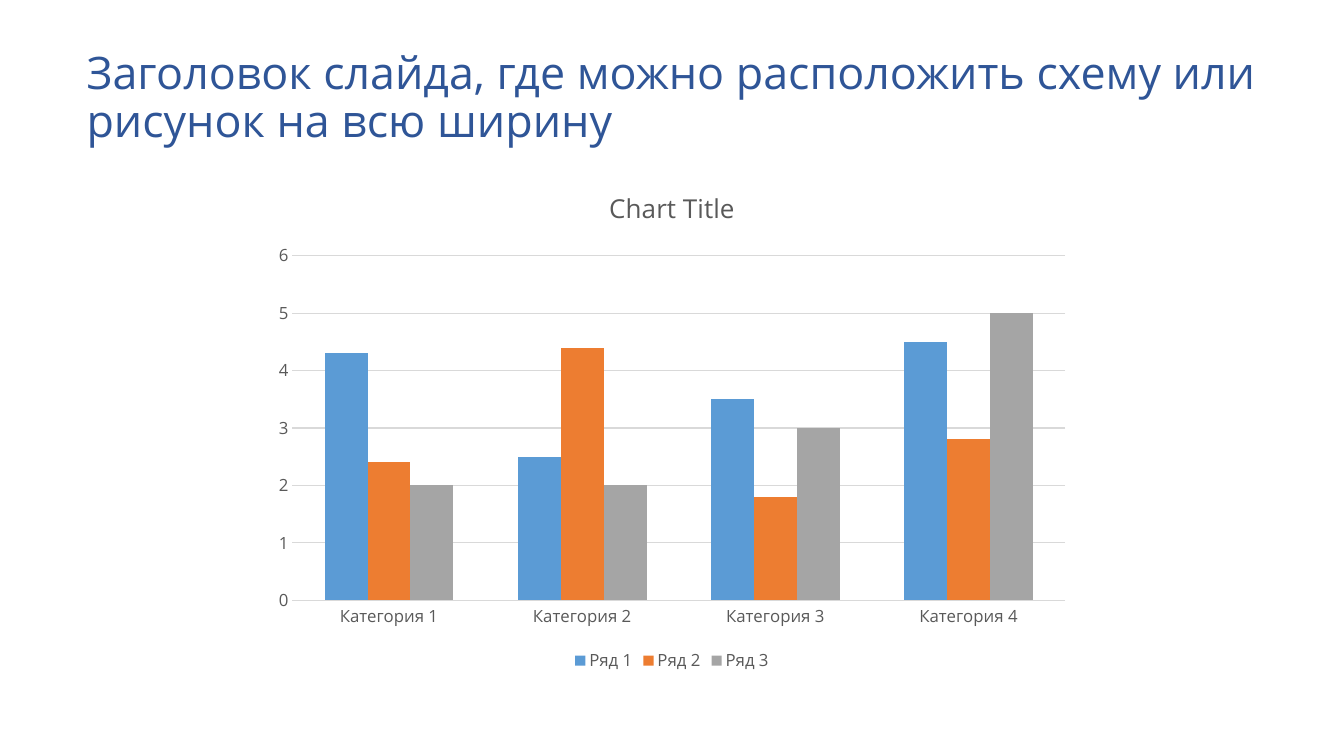
from pptx import Presentation
from pptx.chart.data import CategoryChartData
from pptx.dml.color import RGBColor
from pptx.enum.chart import XL_CHART_TYPE, XL_LEGEND_POSITION, XL_TICK_MARK
from pptx.enum.text import MSO_ANCHOR
from pptx.util import Pt

PX = 9525  # EMU per px, 96 px to the inch
FONT = "Open Sans"
NAVY = RGBColor(0x2F, 0x55, 0x97)
GREY = RGBColor(0x59, 0x59, 0x59)
PALE = RGBColor(0xD9, 0xD9, 0xD9)
BLUE = RGBColor(0x5B, 0x9B, 0xD5)
ORANGE = RGBColor(0xED, 0x7D, 0x31)
SILVER = RGBColor(0xA5, 0xA5, 0xA5)

TITLE = "Заголовок слайда, где можно расположить схему или рисунок на всю ширину"
ROWS = [
    ("Ряд 1", (4.3, 2.5, 3.5, 4.5), BLUE),
    ("Ряд 2", (2.4, 4.4, 1.8, 2.8), ORANGE),
    ("Ряд 3", (2, 2, 3, 5), SILVER),
]


class Deck:
    def __init__(self, width, height):
        self.prs = Presentation()
        self.prs.slide_width = width * PX
        self.prs.slide_height = height * PX
        self.slide = self.prs.slides.add_slide(self.prs.slide_layouts[6])

    def style(self, font, size, color):
        font.name = FONT
        font.size = Pt(size)
        font.bold = False
        font.color.rgb = color

    def text(self, words, box, size, color):
        frame = self.slide.shapes.add_textbox(*(n * PX for n in box)).text_frame
        frame.word_wrap = True
        frame.vertical_anchor = MSO_ANCHOR.MIDDLE
        frame.text = words
        para = frame.paragraphs[0]
        para.line_spacing = 0.9
        self.style(para.runs[0].font, size, color)

    def chart(self, title, cats, rows, box):
        data = CategoryChartData()
        data.categories = cats
        for name, vals, _ in rows:
            data.add_series(name, vals)
        chart = self.slide.shapes.add_chart(
            XL_CHART_TYPE.COLUMN_CLUSTERED, *(n * PX for n in box), data
        ).chart
        self.style(chart.font, 12, GREY)

        head = chart.chart_title.text_frame
        head.text = title
        self.style(head.paragraphs[0].runs[0].font, 18.6, GREY)

        chart.has_legend = True
        chart.legend.position = XL_LEGEND_POSITION.BOTTOM
        chart.legend.include_in_layout = False
        self.style(chart.legend.font, 12, GREY)

        plot = chart.plots[0]
        plot.gap_width = 150
        plot.overlap = 0
        plot.vary_by_categories = False
        for bar, (_, _, color) in zip(plot.series, rows):
            bar.format.fill.solid()
            bar.format.fill.fore_color.rgb = color

        for axis in (chart.category_axis, chart.value_axis):
            axis.major_tick_mark = XL_TICK_MARK.NONE
            axis.minor_tick_mark = XL_TICK_MARK.NONE
            axis.format.line.fill.background()
            self.style(axis.tick_labels.font, 12, GREY)

        scale = chart.value_axis
        scale.minimum_scale, scale.maximum_scale, scale.major_unit = 0, 6, 1
        grid = scale.major_gridlines.format.line
        grid.width = Pt(0.75)
        grid.color.rgb = PALE


def main():
    deck = Deck(1280, 720)
    deck.text(TITLE, (73, 29, 1134, 131), 32, NAVY)
    cats = [f"Категория {n}" for n in range(1, 5)]
    deck.chart("Chart Title", cats, ROWS, (250, 159, 780, 485))
    deck.prs.save("out.pptx")


if __name__ == "__main__":
    main()
